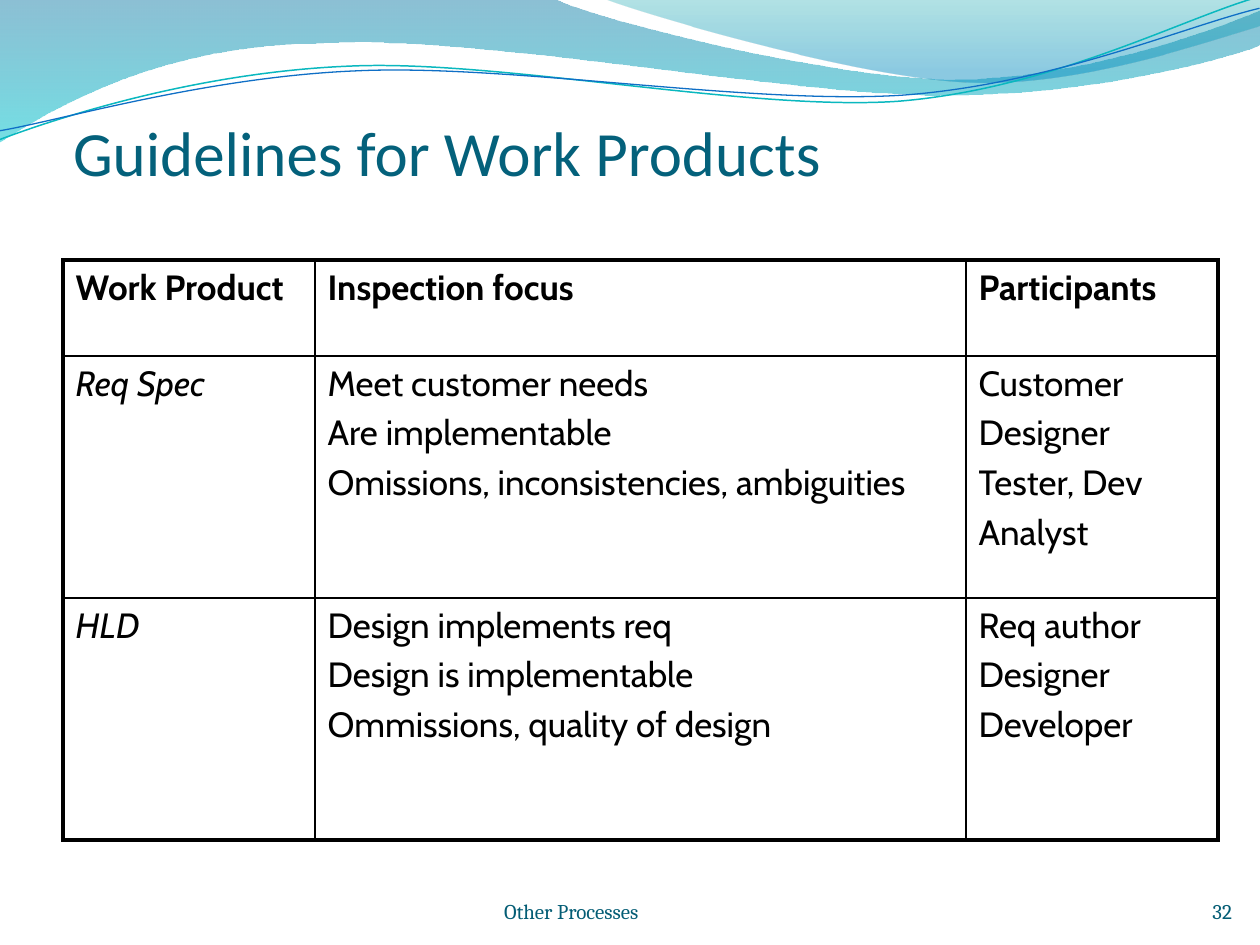
import lxml.etree
import pptx
import pptx.dml.color
import pptx.enum.text
import pptx.oxml.ns
import pptx.util

EMU_PER_PX = 914400 / 126
LINE_ROTATION = 357.3
COLORS = {
    "title": "04617B", "footer": "045D75", "text": "000000", "border": "000000",
    "wave_top": "0074A1", "wave_bottom": "00C6CF",
    "corner_top": "00A1A9", "corner_bottom": "008BBF",
    "teal_line": "0AB8BF", "blue_line": "0F6FC6",
}
# A path is a start point, then segments: one point for a line, three for a cubic curve.
WAVE = [(0, -1), [(554, -1)],
        [(600, 21), (837, 79), (955, 79)], [(1075, 79), (1207, 33), (1260, 11)],
        [(1261, 45)],
        [(1239, 55), (1096, 96), (940, 95)], [(784, 95), (481, 35), (324, 43)],
        [(163, 44), (58, 105), (-1, 142)]]
CORNER = [(604, -1), [(641, 14), (859, 78), (969, 82)],
          [(1079, 87), (1211, 40), (1260, 26)], [(1260, 0)]]
TEAL_LINE = [(-3, 110), [(59, 90), (199, 52), (350, 53)],
             [(499, 53), (745, 117), (896, 114)], [(1049, 109), (1184, 45), (1260, 27)]]
BLUE_LINE = [(-2, 101), [(57, 94), (207, 57), (357, 58)],
             [(509, 58), (750, 111), (902, 108)], [(1052, 104), (1188, 52), (1262, 38)]]

COLUMN_WIDTHS = [252, 651, 252]
ROW_HEIGHTS = [96, 242, 242]
ROWS = [
    [["Work Product"], ["Inspection focus"], ["Participants"]],
    [["Req Spec"],
     ["Meet customer needs", "Are implementable", "Omissions, inconsistencies, ambiguities"],
     ["Customer", "Designer", "Tester, Dev", "Analyst"]],
    [["HLD"],
     ["Design implements req", "Design is implementable", "Ommissions, quality of design"],
     ["Req author", "Designer", "Developer"]],
]


def px(length):
    return pptx.util.Emu(round(length * EMU_PER_PX))


def rgb(name):
    return pptx.dml.color.RGBColor.from_string(COLORS[name])


def sub_element(parent, tag, **attributes):
    return lxml.etree.SubElement(parent, pptx.oxml.ns.qn(tag), attributes)


def bend_segments(shape, segments):
    """Merge each three line steps that stand for a cubic curve into one curve step."""
    steps = iter(list(shape._element.iter(pptx.oxml.ns.qn("a:lnTo"))))
    for segment in segments:
        first, *others = [next(steps) for _ in segment]
        if not others:
            continue
        curve = lxml.etree.Element(pptx.oxml.ns.qn("a:cubicBezTo"))
        first.addprevious(curve)
        for step in (first, *others):
            curve.append(step[0])
            step.getparent().remove(step)


def add_outline(page, path, close):
    start, *segments = path
    builder = page.shapes.build_freeform(px(start[0]), px(start[1]), scale=1.0)
    builder.add_line_segments(
        [(px(x), px(y)) for segment in segments for x, y in segment], close=close)
    shape = builder.convert_to_shape()
    bend_segments(shape, segments)
    shape.shadow.inherit = False
    return shape


def add_wave(page, path, stops):
    """Stops are (color name, position, opacity in percent), from top to bottom."""
    shape = add_outline(page, path, close=True)
    shape.line.fill.background()
    shape.fill.gradient()
    shape.fill.gradient_angle = 270
    for stop, (color, position, _) in zip(shape.fill.gradient_stops, stops):
        stop.color.rgb = rgb(color)
        stop.position = position
    color_elements = shape._element.spPr.iter(pptx.oxml.ns.qn("a:srgbClr"))
    for element, (_, _, opacity) in zip(color_elements, stops):
        sub_element(element, "a:alpha", val=str(opacity * 1000))


def add_curve(page, path, color, width):
    shape = add_outline(page, path, close=False)
    shape.rotation = LINE_ROTATION
    shape.fill.background()
    shape.line.color.rgb = rgb(color)
    shape.line.width = pptx.util.Pt(width)


def place(shape, left, top, width, height):
    shape.left, shape.top, shape.width, shape.height = map(px, (left, top, width, height))


def style_font(target, size, font, color):
    target.size = pptx.util.Pt(size)
    target.name = font
    target.color.rgb = rgb(color)


def fill_text(box, text, size, font, color, align, top_inset=0):
    frame = box.text_frame
    frame.word_wrap = True
    frame.auto_size = pptx.enum.text.MSO_AUTO_SIZE.NONE
    frame.vertical_anchor = pptx.enum.text.MSO_ANCHOR.BOTTOM
    frame.margin_left = frame.margin_right = frame.margin_bottom = 0
    frame.margin_top = px(top_inset)
    frame.text = text
    para = frame.paragraphs[0]
    para.alignment = align
    style_font(para.font, size, font, color)


def add_footer(page, text, left, width, align):
    box = page.shapes.add_textbox(0, 0, 0, 0)
    place(box, left, 861, width, 63)
    fill_text(box, text, 12, "Cambria", "footer", align)


def draw_borders(cell, outer_sides):
    properties = cell._tc.get_or_add_tcPr()
    for side in "LRTB":
        width = pptx.util.Pt(2.25 if side in outer_sides else 1)
        line = sub_element(properties, f"a:ln{side}", w=str(int(width)))
        fill = sub_element(line, "a:solidFill")
        sub_element(fill, "a:srgbClr", val=COLORS["border"])


def add_guideline_table(page):
    table = page.shapes.add_table(
        len(ROWS), len(COLUMN_WIDTHS), px(63), px(260),
        px(sum(COLUMN_WIDTHS)), px(sum(ROW_HEIGHTS))).table
    table.first_row = table.horz_banding = False
    for column, width in zip(table.columns, COLUMN_WIDTHS):
        column.width = px(width)
    for row, height in zip(table.rows, ROW_HEIGHTS):
        row.height = px(height)
    for r, row in enumerate(ROWS):
        for c, lines in enumerate(row):
            cell = table.cell(r, c)
            edges = {"T": r == 0, "B": r == len(ROWS) - 1,
                     "L": c == 0, "R": c == len(row) - 1}
            draw_borders(cell, [side for side, outer in edges.items() if outer])
            cell.fill.background()
            cell.text = "\n".join(lines)
            for para in cell.text_frame.paragraphs:
                para.space_before = pptx.util.Pt(4)
                style_font(para.font, 20, "Cabin", "text")
                para.font.bold = r == 0
                para.font.italic = r > 0 and c == 0


def main():
    deck = pptx.Presentation()
    deck.slide_width, deck.slide_height = px(1260), px(945)
    page = deck.slides.add_slide(deck.slide_layouts[5])
    align = pptx.enum.text.PP_ALIGN

    add_wave(page, WAVE, [("wave_top", 0, 45), ("wave_bottom", 1, 55)])
    add_wave(page, CORNER, [("corner_top", 0, 30), ("corner_bottom", 0.8, 45)])
    add_curve(page, TEAL_LINE, "teal_line", 0.85)
    add_curve(page, BLUE_LINE, "blue_line", 0.75)

    title = page.shapes.title
    page.shapes._spTree.append(title._element)  # in front of the waves
    place(title, 73, 32, 1074, 157)
    fill_text(title, "Guidelines for Work Products", 36, "Calibri", "title",
              align.LEFT, top_inset=6)

    add_guideline_table(page)
    add_footer(page, "Other Processes", 504, 399, align.LEFT)
    add_footer(page, "32", 970, 262, align.RIGHT)
    deck.save("out.pptx")


if __name__ == "__main__":
    main()
